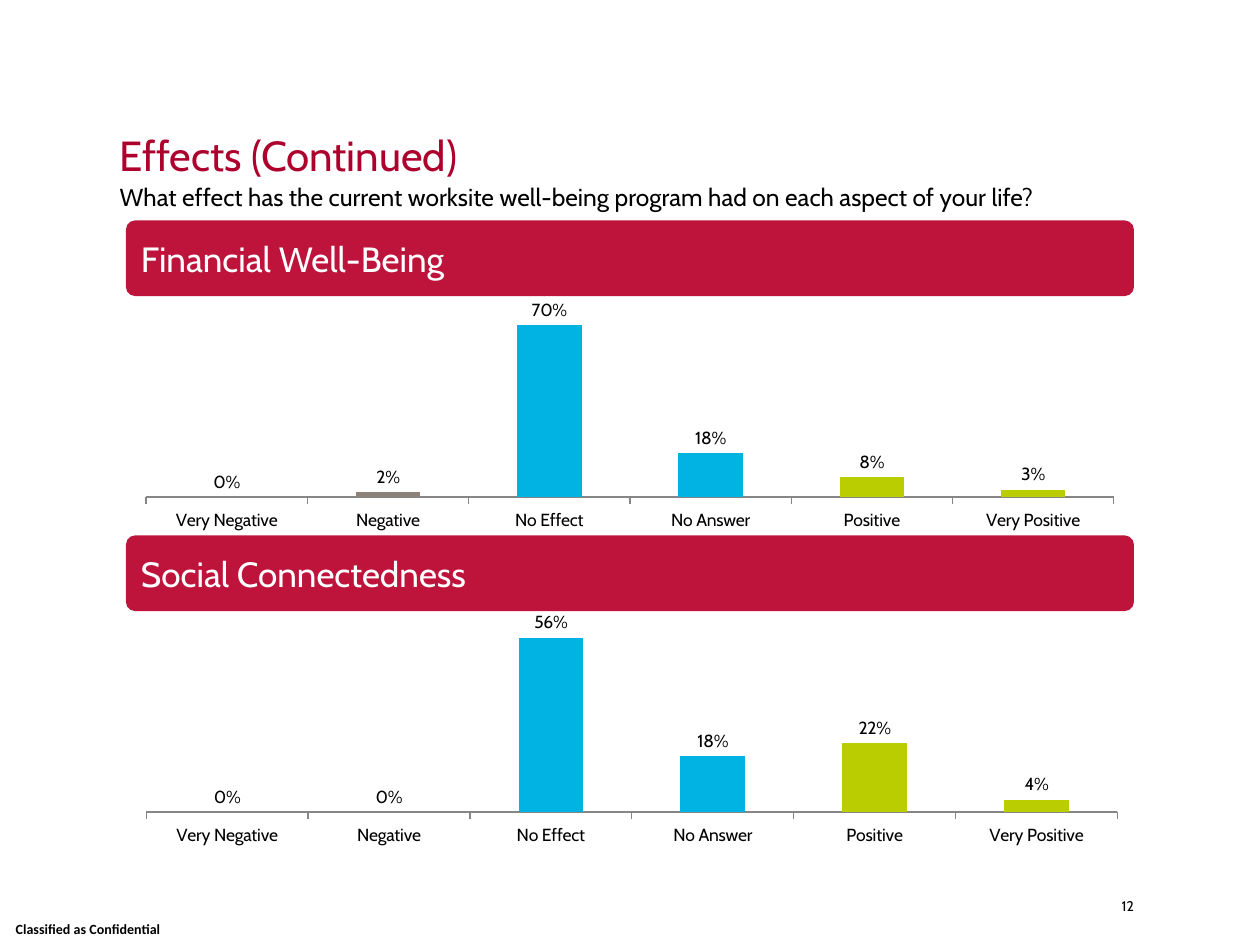
from lxml import etree
from pptx import Presentation
from pptx import util as u
from pptx.chart import data
from pptx.dml.color import RGBColor
from pptx.enum import chart as ch, shapes, text

PX = 9144  # 100 px to the inch
COLORS = {"title": "AE002C", "banner": "BE143C", "ink": "000000",
          "paper": "FFFFFF", "negative": "8D827A", "neutral": "00B3E3",
          "positive": "B9CD00", "axis": "868686"}
ANSWERS = {"Very Negative": "negative", "Negative": "negative",
           "No Effect": "neutral", "No Answer": "neutral",
           "Positive": "positive", "Very Positive": "positive"}
# heading, top, chart width, axis maximum, shares by answer
ASPECTS = [
    ("Financial Well-Being", 175, 800, 0.8, (0, 0.02, 0.7, 0.18, 0.08, 0.03)),
    ("Social Connectedness", 425, 803, 0.63, (0, 0, 0.56, 0.18, 0.22, 0.04)),
]
PLOT_BOX = {"x": 0.02, "y": 0.02, "w": 0.96, "h": 0.82}


def px(*lengths):
    return [u.Emu(length * PX) for length in lengths]


def rgb(name):
    return RGBColor.from_string(COLORS[name])


def style(font, size, color="ink", face="Cabin", bold=False):
    font.name, font.size, font.bold = face, u.Pt(size), bold
    font.color.rgb = rgb(color)


def add_line(slide, box, words, size, color="ink", face="Cabin", bold=False,
             anchor=text.MSO_ANCHOR.TOP, align=text.PP_ALIGN.LEFT):
    """One line of text without margins; returns its paragraph."""
    frame = slide.shapes.add_textbox(*px(*box)).text_frame
    frame.word_wrap = True
    frame.margin_left = frame.margin_right = 0
    frame.margin_top = frame.margin_bottom = 0
    frame.vertical_anchor = anchor
    frame.text = words
    line = frame.paragraphs[0]
    line.alignment = align
    style(line.runs[0].font, size, color, face, bold)
    return line


def add_header(slide, left, top):
    title = add_line(slide, (left, top, 800, 75), "Effects (Continued)", 24,
                     "title", anchor=text.MSO_ANCHOR.BOTTOM)
    title.line_spacing = 0.9
    question = add_line(
        slide, (left, top + 72, 829, 30),
        "What effect has the current worksite well-being program had "
        "on each aspect of your life?", 14)
    question.line_spacing = 1.2
    question.space_before = question.space_after = u.Pt(9)


def add_footer(slide, top):
    add_line(slide, (0, top + 13, 140, 25), "Classified as Confidential", 8,
             face="Calibri", bold=True, anchor=text.MSO_ANCHOR.MIDDLE,
             align=text.PP_ALIGN.CENTER)
    add_line(slide, (851, top, 49, 38), "12", 8, align=text.PP_ALIGN.RIGHT)


def add_banner(slide, left, top, heading):
    banner = slide.shapes.add_shape(shapes.MSO_SHAPE.ROUNDED_RECTANGLE,
                                    *px(left, top, 800, 60))
    banner.adjustments[0] = 0.12
    banner.shadow.inherit = False
    banner.fill.solid()
    banner.fill.fore_color.rgb = rgb("banner")
    banner.line.fill.background()
    frame = banner.text_frame
    frame.vertical_anchor = text.MSO_ANCHOR.MIDDLE
    frame.text = heading
    line = frame.paragraphs[0]
    line.alignment = text.PP_ALIGN.LEFT
    line.space_before, line.space_after = u.Pt(8), u.Pt(9)
    style(line.runs[0].font, 20, "paper")


def fix_plot_box(chart):
    """Pin the inner plot area so that both charts line up."""
    area = chart.plots[0]._element.getparent()
    ns = etree.QName(area).namespace
    for old in area.findall(f"{{{ns}}}layout"):
        area.remove(old)
    layout = etree.Element(f"{{{ns}}}layout")
    manual = etree.SubElement(layout, f"{{{ns}}}manualLayout")
    settings = {"layoutTarget": "inner", "xMode": "edge", "yMode": "edge",
                **PLOT_BOX}
    for tag, value in settings.items():
        etree.SubElement(manual, f"{{{ns}}}{tag}").set("val", str(value))
    area.insert(0, layout)


def add_answers_chart(slide, left, top, width, peak, shares):
    answers = data.CategoryChartData(number_format="0%")
    answers.categories = list(ANSWERS)
    answers.add_series("Series 1", shares)
    chart = slide.shapes.add_chart(ch.XL_CHART_TYPE.COLUMN_CLUSTERED,
                                   *px(left, top, width, 190), answers).chart
    chart.has_legend = chart.has_title = False
    style(chart.font, 10)
    fix_plot_box(chart)

    # Axes
    share_axis, answer_axis = chart.value_axis, chart.category_axis
    share_axis.minimum_scale, share_axis.maximum_scale = 0, peak
    share_axis.has_major_gridlines = False
    share_axis.tick_labels.number_format = "0%"
    share_axis.tick_labels.number_format_is_linked = False
    share_axis.visible = False
    answer_axis.major_tick_mark = ch.XL_TICK_MARK.OUTSIDE
    answer_axis.format.line.color.rgb = rgb("axis")
    answer_axis.format.line.width = u.Pt(0.75)

    # Columns and their labels
    plot = chart.plots[0]
    plot.gap_width = 150
    plot.vary_by_categories = False
    plot.has_data_labels = True
    labels = plot.data_labels
    labels.show_value = True
    labels.number_format, labels.number_format_is_linked = "0%", False
    labels.position = ch.XL_LABEL_POSITION.OUTSIDE_END
    columns = plot.series[0]
    columns.format.fill.solid()
    columns.format.fill.fore_color.rgb = rgb("banner")
    for index, mood in enumerate(ANSWERS.values()):
        fill = columns.points[index].format.fill
        fill.solid()
        fill.fore_color.rgb = rgb(mood)


def add_aspect(slide, left, top, heading, width, peak, shares):
    add_banner(slide, left, top, heading)
    add_answers_chart(slide, left, top + 60, width, peak, shares)


def main():
    deck = Presentation()
    deck.slide_width, deck.slide_height = px(1000, 750)
    slide = deck.slides.add_slide(deck.slide_layouts[6])
    add_header(slide, 95, 68)
    for heading, top, width, peak, shares in ASPECTS:
        add_aspect(slide, 100, top, heading, width, peak, shares)
    add_footer(slide, 712)
    deck.save("out.pptx")


if __name__ == "__main__":
    main()
